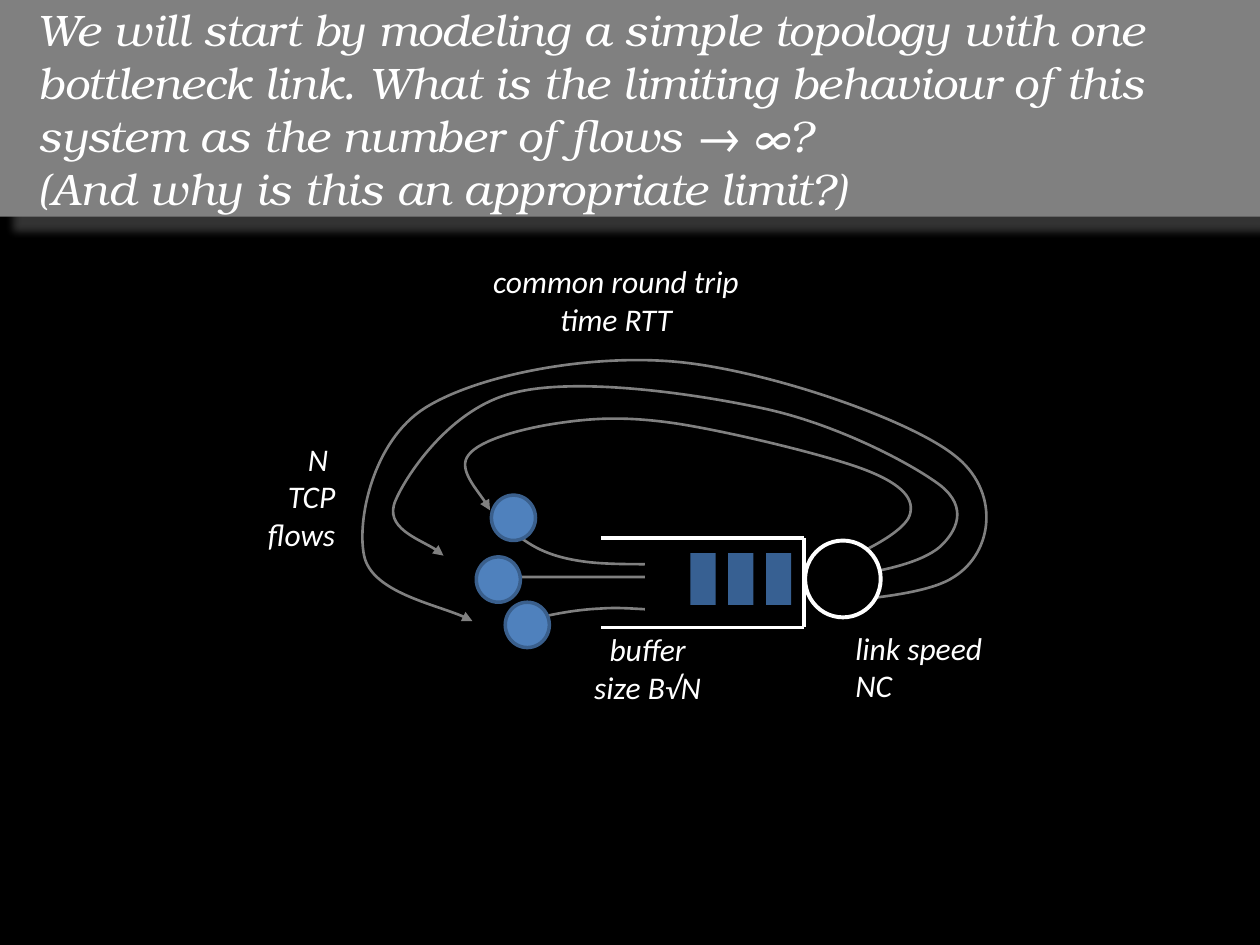
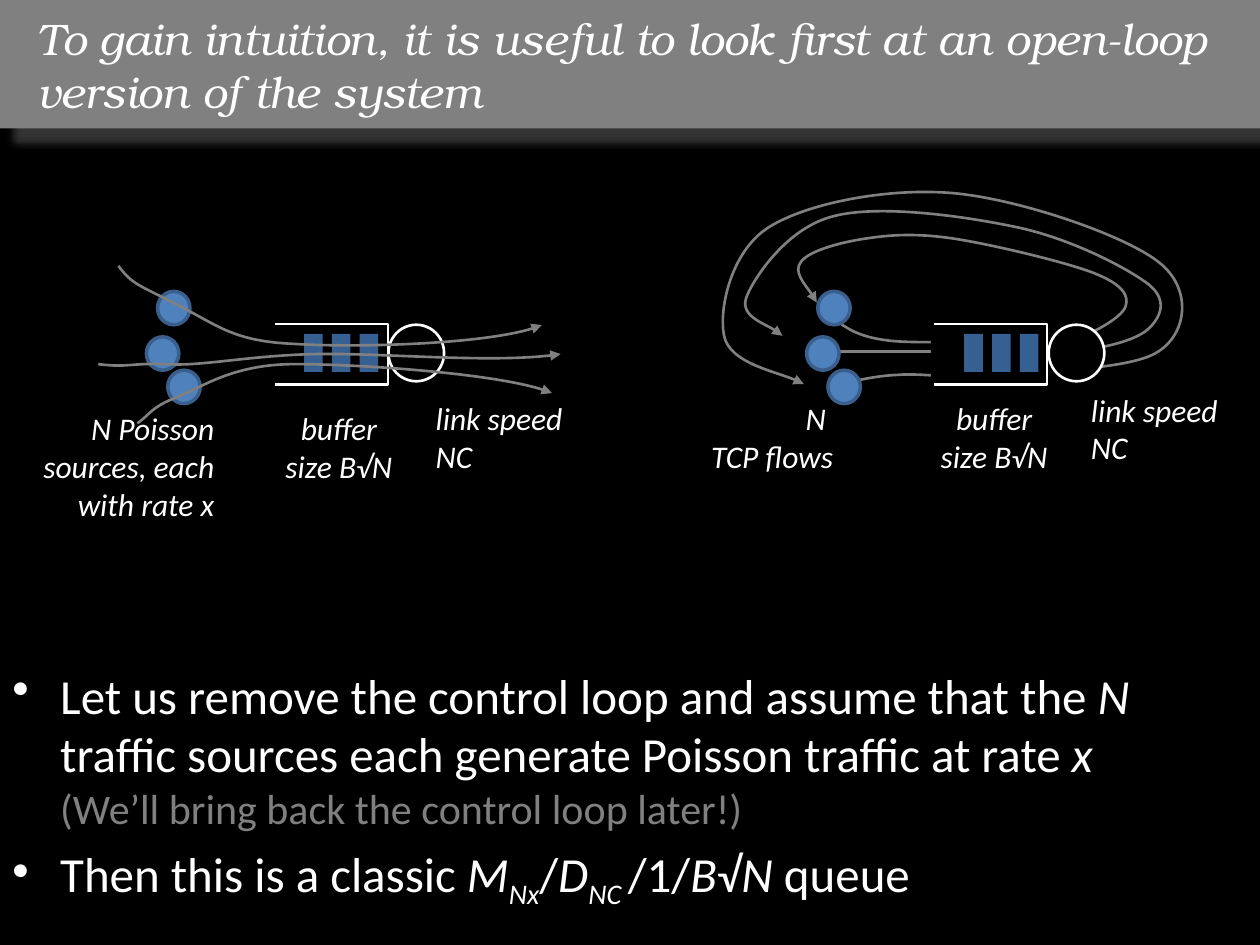
"""Build two slides on a bottleneck queue fed by TCP flows and by Poisson sources."""
from itertools import pairwise

from lxml import etree
from pptx import Presentation, util as u
from pptx.dml.color import RGBColor
from pptx.enum import shapes, text
from pptx.oxml import ns

COLORS = {
    "black": "000000",
    "white": "FFFFFF",
    "gray": "808080",
    "source": "4F81BD",
    "source edge": "3A5F8C",
    "packet": "376092",
}
TITLE_FONT = "TeX Gyre Bonum"
BODY_FONT = "Calibri"
ALIGN = text.PP_ALIGN
KIND = shapes.MSO_SHAPE

LOOPS = [
    [(4.24, 4.91), (4.33, 4.89), (4.53, 4.84), (4.77, 4.83), (5.02, 4.81), (5.24, 4.87),
     (5.71, 4.83), (6.17, 4.79), (7.26, 4.79), (7.57, 4.58), (7.89, 4.38), (7.94, 3.89),
     (7.57, 3.61), (7.2, 3.32), (6.06, 2.93), (5.35, 2.87), (4.65, 2.81), (3.78, 2.98),
     (3.37, 3.24), (2.96, 3.5), (2.83, 4.13), (2.89, 4.41), (2.95, 4.7), (3.57, 4.82),
     (3.75, 4.93)],
    [(3.84, 4.58), (4.3, 4.58), (4.77, 4.58), (5.24, 4.58), (5.7, 4.58), (6.27, 4.63),
     (6.64, 4.58), (7.01, 4.54), (7.32, 4.46), (7.46, 4.34), (7.59, 4.22), (7.69, 4.03),
     (7.46, 3.85), (7.22, 3.67), (6.62, 3.36), (6.05, 3.24), (5.49, 3.12), (4.56, 2.99),
     (4.07, 3.12), (3.58, 3.24), (3.23, 3.76), (3.14, 3.97), (3.04, 4.19), (3.44, 4.32),
     (3.52, 4.41)],
    [(4.07, 4.22), (4.2, 4.32), (4.33, 4.42), (4.66, 4.46), (4.98, 4.5), (5.73, 4.46),
     (6.06, 4.46), (6.38, 4.46), (6.44, 4.52), (6.64, 4.46), (6.83, 4.4), (7.18, 4.22),
     (7.22, 4.09), (7.26, 3.97), (7.18, 3.85), (6.87, 3.73), (6.56, 3.61), (5.76, 3.42),
     (5.36, 3.36), (4.95, 3.3), (4.69, 3.32), (4.42, 3.36), (4.15, 3.4), (3.81, 3.49),
     (3.72, 3.61), (3.63, 3.72), (3.85, 3.96), (3.89, 4.05)],
]
OPEN_FLOWS = [
    [(1.09, 3.36), (1.19, 3.29), (1.2, 3.23), (1.41, 3.15), (1.61, 3.07), (1.85, 2.89),
     (2.34, 2.89), (2.84, 2.89), (4.04, 2.97), (4.38, 3.12)],
    [(0.94, 2.11), (1.05, 2.26), (1.1, 2.26), (1.41, 2.42), (1.74, 2.59), (1.86, 2.71),
     (2.34, 2.73), (2.83, 2.76), (3.96, 2.73), (4.3, 2.58)],
    [(0.78, 2.89), (1.02, 2.92), (1.02, 2.88), (1.33, 2.89), (1.59, 2.91), (1.99, 2.82),
     (2.51, 2.81), (3.03, 2.8), (3.94, 2.89), (4.45, 2.81)],
]


def color(name):
    """Return the named colour."""
    return RGBColor.from_string(COLORS[name])


def write(paragraph, content, size=18, font=BODY_FONT, ink="white", italic=False, baseline=0):
    """Add formatted text to a paragraph, with a line break at each newline."""
    for index, piece in enumerate(content.split("\n")):
        if index:
            paragraph.add_line_break()
        if not piece:
            continue
        run = paragraph.add_run()
        run.text = piece
        run.font.size = u.Pt(size)
        run.font.name = font
        run.font.italic = italic
        run.font.color.rgb = color(ink)
        if baseline:
            run._r.get_or_add_rPr().set("baseline", str(baseline * 1000))


def add_xml(parent, tag, **attributes):
    """Append a DrawingML child element."""
    return etree.SubElement(parent, ns.qn(tag), attributes)


class Deck:
    """Holds the presentation, the current slide and the drawing scale."""

    def __init__(self):
        """Start a black 10 by 7.5 inch presentation."""
        self.presentation = Presentation()
        self.presentation.slide_width = u.Inches(10)
        self.presentation.slide_height = u.Inches(7.5)
        background = self.presentation.slide_master.background.fill
        background.solid()
        background.fore_color.rgb = color("black")

    def new_slide(self, title, height):
        """Add a slide with a shadowed title band."""
        self.slide = self.presentation.slides.add_slide(self.presentation.slide_layouts[5])
        self.view()
        band = self.slide.shapes.title
        band.left, band.top = u.Inches(0), u.Inches(0)
        band.width, band.height = u.Inches(10), u.Inches(height)
        self.paint(band, "gray")
        shadow = add_xml(band._element.spPr.find(ns.qn("a:effectLst")), "a:outerShdw",
                         blurRad=str(u.Pt(4)), dist=str(u.Pt(11)), dir="2700000",
                         algn="tl", rotWithShape="0")
        shade = add_xml(shadow, "a:srgbClr", val=COLORS["gray"])
        add_xml(shade, "a:alpha", val="40000")
        frame = band.text_frame
        frame.auto_size = text.MSO_AUTO_SIZE.NONE
        frame.word_wrap = True
        frame.vertical_anchor = text.MSO_ANCHOR.MIDDLE
        paragraph = frame.paragraphs[0]
        paragraph.alignment = ALIGN.LEFT
        self.indent(paragraph, 0.2, 0)
        write(paragraph, title, size=25.2, font=TITLE_FONT, italic=True)

    def view(self, canvas=None, scale=1, dx=0, dy=0):
        """Choose where the next shapes go and how they are scaled and moved."""
        self.canvas = canvas or self.slide.shapes
        self.scale, self.dx, self.dy = scale, dx, dy

    def place(self, x, y):
        """Convert a point of the drawing to slide lengths."""
        return u.Inches(x * self.scale + self.dx), u.Inches(y * self.scale + self.dy)

    def indent(self, paragraph, margin, first):
        """Set the left margin and first line indent of a paragraph."""
        properties = paragraph._p.get_or_add_pPr()
        properties.set("marL", str(u.Inches(margin)))
        properties.set("indent", str(u.Inches(first)))
        return properties

    def paint(self, shape, fill=None, line=None, width=1.5):
        """Set fill and outline and drop the theme shadow."""
        shape.shadow.inherit = False
        if fill:
            shape.fill.solid()
            shape.fill.fore_color.rgb = color(fill)
        else:
            shape.fill.background()
        if line:
            shape.line.color.rgb = color(line)
            shape.line.width = u.Pt(width)
        else:
            shape.line.fill.background()

    def shape(self, kind, x, y, width, height, fill, line=None, line_width=1.5):
        """Add a preset shape in drawing coordinates."""
        size = u.Inches(width * self.scale), u.Inches(height * self.scale)
        shape = self.canvas.add_shape(kind, *self.place(x, y), *size)
        self.paint(shape, fill, line, line_width)

    def outline(self, points, line):
        """Add an open, unfilled outline."""
        start, *rest = [self.place(*point) for point in points]
        builder = self.canvas.build_freeform(*start)
        builder.add_line_segments(rest, close=False)
        shape = builder.convert_to_shape()
        self.paint(shape, line=line)
        return shape

    def flow(self, points):
        """Add a curved arrow through a chain of Bezier points."""
        shape = self.outline(points, "gray")
        segments = list(shape._element.iter(ns.qn("a:lnTo")))
        for first, *others in zip(segments[::3], segments[1::3], segments[2::3]):
            first.tag = ns.qn("a:cubicBezTo")
            for other in others:
                first.append(other[0])
                other.getparent().remove(other)
        add_xml(shape.line._get_or_add_ln(), "a:tailEnd", type="triangle")

    def line(self, start, end, width):
        """Add a straight white line."""
        connector = self.canvas.add_connector(
            shapes.MSO_CONNECTOR.STRAIGHT, *self.place(*start), *self.place(*end))
        connector.line.color.rgb = color("white")
        connector.line.width = u.Pt(width)
        add_xml(connector._element.spPr, "a:effectLst")

    def queue(self, server_line):
        """Add the buffer, its server, three packets and three sources."""
        self.shape(KIND.RECTANGLE, 5.12, 4.34, 1.52, 0.61, "black")
        self.shape(KIND.OVAL, 6.39, 4.29, 0.6, 0.61, "black", "white", server_line)
        for index in range(3):
            self.shape(KIND.RECTANGLE, 6.08 - 0.3 * index, 4.39, 0.2, 0.41, "packet")
        for x, y in [(3.9, 3.93), (3.78, 4.42), (4.01, 4.78)]:
            self.shape(KIND.OVAL, x, y, 0.35, 0.36, "source", "source edge", 2)

    def text_box(self, x, y, width, height):
        """Add a wrapping text box and return its frame."""
        box = self.slide.shapes.add_textbox(*map(u.Inches, (x, y, width, height)))
        box.text_frame.word_wrap = True
        return box.text_frame

    def label(self, content, x, y, width, height, align=ALIGN.LEFT):
        """Add an italic label."""
        paragraph = self.text_box(x, y, width, height).paragraphs[0]
        paragraph.alignment = align
        write(paragraph, content, italic=True)

    def queue_labels(self, buffer_at, link_at):
        """Name the buffer and the link."""
        self.label("buffer size B√N", *buffer_at, 1.16, 0.71, ALIGN.CENTER)
        self.label("link speed NC", *link_at, 1.44, 0.71)

    def bullets(self, items, x, y, width, height):
        """Add bulleted paragraphs made of (text, format) runs."""
        frame = self.text_box(x, y, width, height)
        for index, runs in enumerate(items):
            paragraph = frame.add_paragraph() if index else frame.paragraphs[0]
            paragraph.space_before = u.Pt(5.6)
            add_xml(self.indent(paragraph, 0.38, -0.38), "a:buChar", char="•")
            for content, style in runs:
                write(paragraph, content, **{"size": 28, **style})


def closed_loop_slide(deck):
    """Draw the bottleneck topology with its feedback loops."""
    deck.new_slide(
        "We will start by modeling a simple topology with one bottleneck link. What is the "
        "limiting behaviour of this system as the number of flows → ∞? \n"
        "(And why is this an appropriate limit?)", 1.72)
    deck.label("N \nTCP flows", 1.8, 3.44, 0.96, 1.01, ALIGN.RIGHT)
    deck.label("common round trip time RTT", 3.76, 2.03, 2.26, 0.71, ALIGN.CENTER)
    deck.view(deck.slide.shapes.add_group_shape().shapes)
    for loop in LOOPS:
        deck.flow(loop)
    deck.queue(2.25)
    for start, end in pairwise([(4.77, 4.27), (6.38, 4.27), (6.38, 4.98), (4.77, 4.98)]):
        deck.line(start, end, 2.25)
    deck.queue_labels((4.56, 4.95), (6.69, 4.94))


def open_loop_slide(deck):
    """Compare the open-loop queue with the closed-loop one."""
    deck.new_slide("To gain intuition, it is useful to look first at an open-loop version "
                   "of the system", 1.02)
    italic, subscript = {"italic": True}, {"italic": True, "baseline": -25}
    deck.bullets([
        [("Let us remove the control loop and assume that the ", {}), ("N", italic),
         (" traffic sources each generate Poisson traffic at rate ", {}), ("x\n", italic),
         ("(We’ll bring back the control loop later!)", {"size": 24, "ink": "gray"})],
        [("Then this is a classic ", {}), ("M", italic), ("Nx", subscript), ("/", {}),
         ("D", italic), ("NC ", subscript), ("/1/", {}), ("B", italic), ("√", {}),
         ("N", italic), (" queue", {})],
    ], 0, 5.23, 10, 2.27)
    for loops, dx, rail in [(LOOPS, 3.62, 7.41), ([], -1.62, 2.18)]:
        deck.view(scale=0.736, dx=dx, dy=-0.58)
        for loop in loops:
            deck.flow(loop)
        deck.queue(1.5)
        deck.view()
        end = rail + 0.9
        deck.outline([(rail, 2.57), (end, 2.57), (end, 3.05), (rail, 3.05)], "white")
    for flow in OPEN_FLOWS:
        deck.flow(flow)
    deck.label("N \nTCP flows", 5.52, 3.12, 1.19, 0.71, ALIGN.RIGHT)
    deck.queue_labels((7.31, 3.12), (8.56, 3.05))
    deck.label("N Poisson sources, each with rate x", 0, 3.2, 1.8, 1.01, ALIGN.RIGHT)
    deck.queue_labels((2.11, 3.2), (3.36, 3.12))


def main():
    """Build and save the presentation."""
    deck = Deck()
    closed_loop_slide(deck)
    open_loop_slide(deck)
    deck.presentation.save("out.pptx")


if __name__ == "__main__":
    main()
